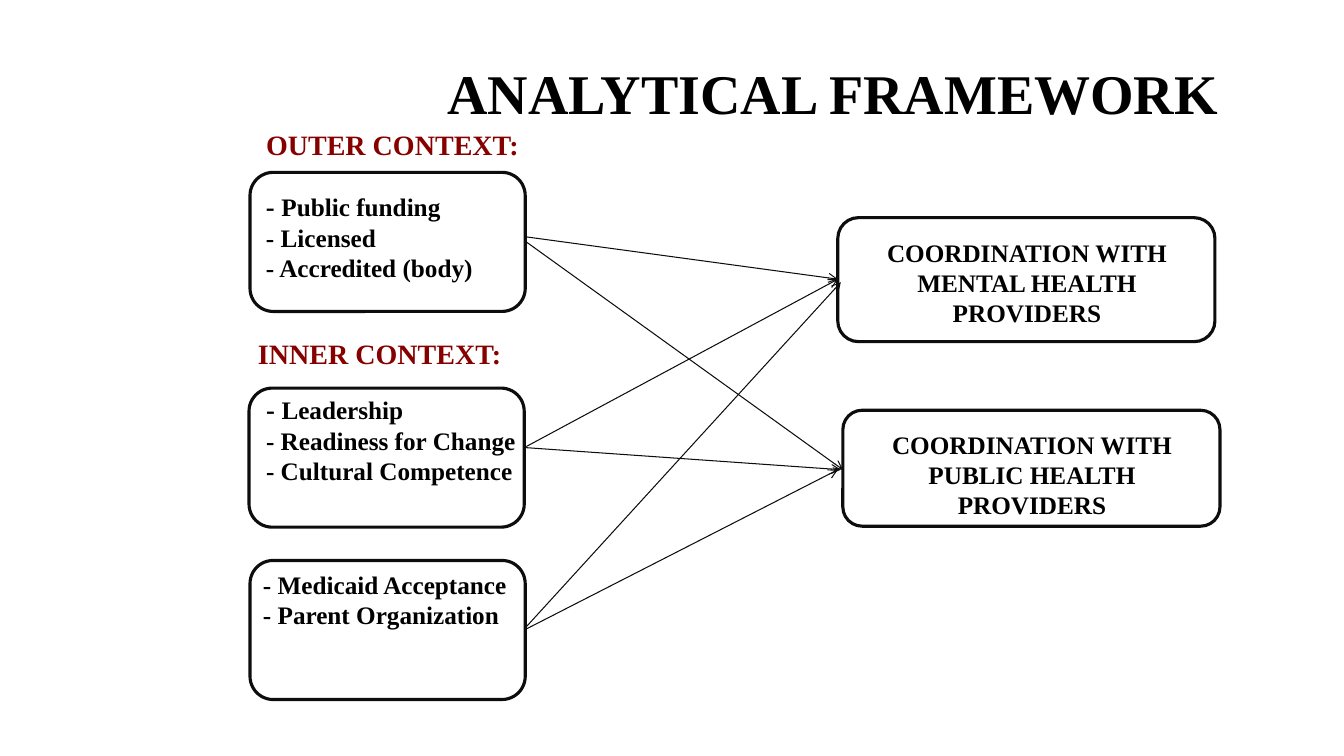
import pptx
import pptx.util
import pptx.dml.color
import pptx.enum.shapes
import pptx.enum.text
import pptx.oxml.ns
from lxml import etree

Inches = pptx.util.Inches
Pt = pptx.util.Pt
ALIGN = pptx.enum.text.PP_ALIGN
ANCHOR = pptx.enum.text.MSO_ANCHOR

FONT = "Times New Roman"
BLACK, OUTLINE, HEADING = "000000", "0D0D0D", "860000"


def color(hex_code):
    return pptx.dml.color.RGBColor.from_string(hex_code)


def add_text(slide, left, top, width, height, lines, size=18, ink=BLACK,
             align=ALIGN.LEFT, anchor=ANCHOR.TOP, first_dash_size=None):
    label = slide.shapes.add_textbox(
        Inches(left), Inches(top), Inches(width), Inches(height))
    frame = label.text_frame
    frame.word_wrap = True
    frame.vertical_anchor = anchor
    for index, line in enumerate(lines):
        paragraph = frame.paragraphs[0] if index == 0 else frame.add_paragraph()
        paragraph.alignment = align
        paragraph.font.name = FONT
        paragraph.font.size = Pt(size)
        paragraph.font.bold = True
        paragraph.font.color.rgb = color(ink)
        if index == 0 and first_dash_size:
            dash = paragraph.add_run()
            dash.text = "- "
            dash.font.size = Pt(first_dash_size)
            line = line.removeprefix("- ")
        paragraph.add_run().text = line


def add_frame(slide, left, top, width, height):
    frame = slide.shapes.add_shape(
        pptx.enum.shapes.MSO_SHAPE.ROUNDED_RECTANGLE,
        Inches(left), Inches(top), Inches(width), Inches(height))
    frame.shadow.inherit = False
    frame.fill.background()
    frame.line.color.rgb = color(OUTLINE)
    frame.line.width = Pt(2.25)


def add_arrow(slide, start, end):
    arrow = slide.shapes.add_connector(
        pptx.enum.shapes.MSO_CONNECTOR.STRAIGHT,
        *(Inches(value) for value in start + end))
    arrow.line.color.rgb = color(OUTLINE)
    arrow.line.width = Pt(0.75)
    qn = pptx.oxml.ns.qn
    etree.SubElement(arrow.line._get_or_add_ln(), qn("a:tailEnd"), type="arrow")
    etree.SubElement(arrow._element.spPr, qn("a:effectLst"))


def main():
    deck = pptx.Presentation()
    deck.slide_width, deck.slide_height = Inches(13.33), Inches(7.5)
    slide = deck.slides.add_slide(deck.slide_layouts[6])

    # Title
    add_text(slide, 4.01, 0.53, 8.5, 0.77, ["ANALYTICAL FRAMEWORK"], 40,
             align=ALIGN.CENTER, anchor=ANCHOR.BOTTOM)

    # Context headings
    for left, top, heading in [(2.54, 1.22, "OUTER CONTEXT:"),
                               (2.46, 3.29, "INNER CONTEXT:")]:
        add_text(slide, left, top, 3.09, 0.44, [heading], 20, HEADING)

    # Context factors: frame and list
    for left, top in [(2.48, 1.71), (2.47, 3.85), (2.48, 5.56)]:
        add_frame(slide, left, top, 2.73, 1.38)
    add_text(slide, 2.54, 1.84, 2.63, 1.06,
             ["- Public funding", "- Licensed", "- Accredited (body)"],
             first_dash_size=19)
    add_text(slide, 2.54, 3.85, 2.69, 1.04,
             ["- Leadership", "- Readiness for Change", "- Cultural Competence"],
             first_dash_size=19)
    add_text(slide, 2.51, 5.6, 2.69, 1.08,
             ["- Medicaid Acceptance", "- Parent Organization"])

    # Coordination outcomes
    for left, top, height, text_top, field in [
            (8.31, 2.16, 1.23, 2.3, "MENTAL"),
            (8.36, 4.07, 1.15, 4.21, "PUBLIC")]:
        add_frame(slide, left, top, 3.74, height)
        add_text(slide, left + 0.03, text_top, 3.69, 1.01,
                 [f"COORDINATION WITH {field} HEALTH PROVIDERS"],
                 align=ALIGN.CENTER)

    # Arrows from each factor to both outcomes
    for start, end in [
            ((5.22, 2.35), (8.31, 2.77)), ((5.22, 2.4), (8.36, 4.66)),
            ((5.22, 4.43), (8.31, 2.77)), ((5.2, 4.44), (8.34, 4.66)),
            ((5.2, 6.24), (8.34, 2.8)), ((5.2, 6.25), (8.31, 4.66))]:
        add_arrow(slide, start, end)

    deck.save("out.pptx")


if __name__ == "__main__":
    main()
